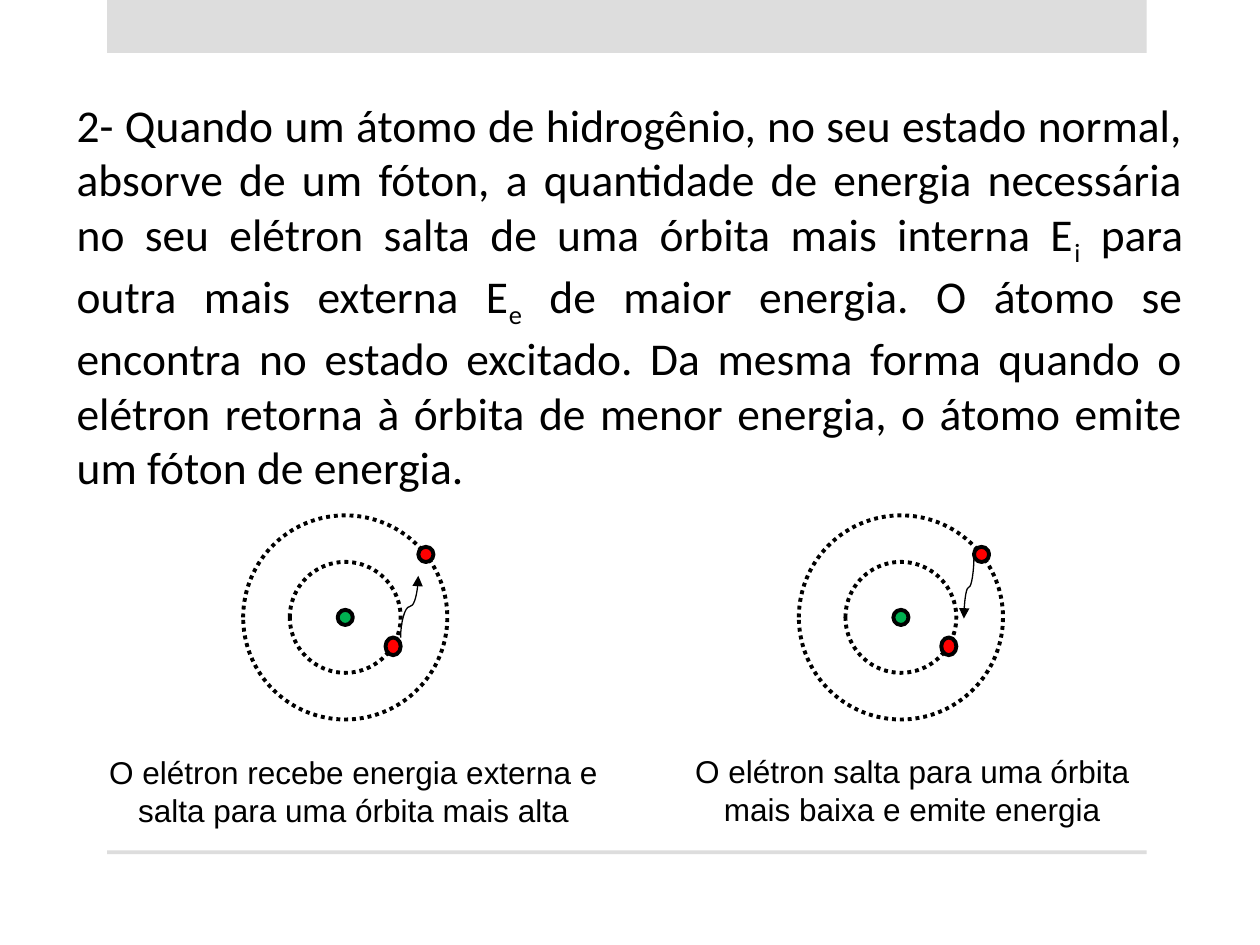
from lxml import etree
from pptx import Presentation
from pptx.dml.color import RGBColor
from pptx.enum.dml import MSO_LINE
from pptx.enum.shapes import MSO_CONNECTOR, MSO_SHAPE
from pptx.enum.text import MSO_AUTO_SIZE, PP_ALIGN
from pptx.oxml.ns import qn
from pptx.util import Inches, Pt

BLACK = RGBColor(0x00, 0x00, 0x00)
GRAY = RGBColor(0xDD, 0xDD, 0xDD)
GREEN = RGBColor(0x00, 0xB0, 0x50)
RED = RGBColor(0xFF, 0x00, 0x00)

RECT = MSO_SHAPE.RECTANGLE
OVAL = MSO_SHAPE.OVAL
CURVE = MSO_CONNECTOR.CURVE
DOTTED = MSO_LINE.ROUND_DOT
GROW = MSO_AUTO_SIZE.SHAPE_TO_FIT_TEXT
JUSTIFY = PP_ALIGN.JUSTIFY
CENTER = PP_ALIGN.CENTER

STATEMENT = [
    ("2- Quando um átomo de hidrogênio, no seu estado normal, absorve de um "
     "fóton, a quantidade de energia necessária no seu elétron salta de uma "
     "órbita mais interna E", False),
    ("i", True),
    (" para outra mais externa E", False),
    ("e", True),
    (" de maior energia. O átomo se encontra no estado excitado. Da mesma "
     "forma quando o elétron retorna à órbita de menor energia, o átomo emite "
     "um fóton de energia.", False),
]


def add_bar(s, x, y, w, h):
    sp = s.shapes.add_shape(RECT, Inches(x), Inches(y), Inches(w), Inches(h))
    sp.shadow.inherit = False
    sp.fill.solid()
    sp.fill.fore_color.rgb = GRAY
    sp.line.fill.background()


def add_text(s, x, y, w, h, runs, font, size, align):
    sp = s.shapes.add_textbox(Inches(x), Inches(y), Inches(w), Inches(h))
    tf = sp.text_frame
    tf.word_wrap = True
    tf.auto_size = GROW
    p = tf.paragraphs[0]
    p.alignment = align
    for text, subscript in runs:
        r = p.add_run()
        r.text = text
        r.font.name = font
        r.font.size = Pt(size)
        r.font.color.rgb = BLACK
        if subscript:
            r._r.get_or_add_rPr().set("baseline", "-25000")


def add_circle(grp, cx, cy, w, h, fill=None):
    sp = grp.shapes.add_shape(OVAL, Inches(cx - w / 2), Inches(cy - h / 2),
                              Inches(w), Inches(h))
    sp.shadow.inherit = False
    sp.line.color.rgb = BLACK
    sp.line.width = Pt(2.25)
    if fill is None:
        sp.fill.background()
        sp.line.dash_style = DOTTED
    else:
        sp.fill.solid()
        sp.fill.fore_color.rgb = fill


def add_jump(grp, x1, y1, x2, y2):
    cx, cy = (x1 + x2) / 2, (y1 + y2) / 2
    w, h = abs(y2 - y1), abs(x2 - x1)
    cn = grp.shapes.add_connector(CURVE, Inches(cx - w / 2), Inches(cy - h / 2),
                                  Inches(cx + w / 2), Inches(cy + h / 2))
    cn.line.color.rgb = BLACK
    cn.line.width = Pt(0.75)
    ln = cn.line._get_or_add_ln()
    etree.SubElement(ln, qn("a:tailEnd")).set("type", "triangle")
    sp_pr = cn._element.spPr
    etree.SubElement(sp_pr, qn("a:effectLst"))
    quarter_turns = 3 if y2 < y1 else 1
    sp_pr.find(qn("a:xfrm")).set("rot", str(quarter_turns * 90 * 60000))


def add_atom(s, x, y, size, jump):
    grp = s.shapes.add_group_shape()
    cx, cy = x + size / 2, y + size / 2
    add_circle(grp, cx, cy, 0.12, 0.12, GREEN)
    for diameter in (0.88, size):
        add_circle(grp, cx, cy, diameter, diameter)
    add_circle(grp, cx + 0.64, cy - 0.5, 0.12, 0.12, RED)
    add_circle(grp, cx + 0.38, cy + 0.23, 0.12, 0.14, RED)
    x1, y1, x2, y2 = jump
    add_jump(grp, cx + x1, cy + y1, cx + x2, cy + y2)


def main():
    prs = Presentation()
    prs.slide_width = Inches(10)
    prs.slide_height = Inches(7.5)
    s = prs.slides.add_slide(prs.slide_layouts[6])
    add_bar(s, 0.85, 0, 8.25, 0.42)
    add_bar(s, 0.85, 6.75, 8.25, 0.03)
    add_text(s, 0.51, 0.72, 8.98, 3.47, STATEMENT, "Calibri", 26, JUSTIFY)
    add_atom(s, 1.93, 4.09, 1.62, (0.44, 0.16, 0.58, -0.33))
    add_atom(s, 6.34, 4.09, 1.62, (0.58, -0.49, 0.5, 0.01))
    captions = [
        (0.75, 5.93, 4.11,
         "O elétron recebe energia externa e salta para uma órbita mais alta"),
        (5.31, 5.92, 3.86,
         "O elétron salta para uma órbita mais baixa e emite energia"),
    ]
    for x, y, w, text in captions:
        add_text(s, x, y, w, 0.71, [(text, False)], "Arial", 18, CENTER)
    prs.save("out.pptx")


if __name__ == "__main__":
    main()
